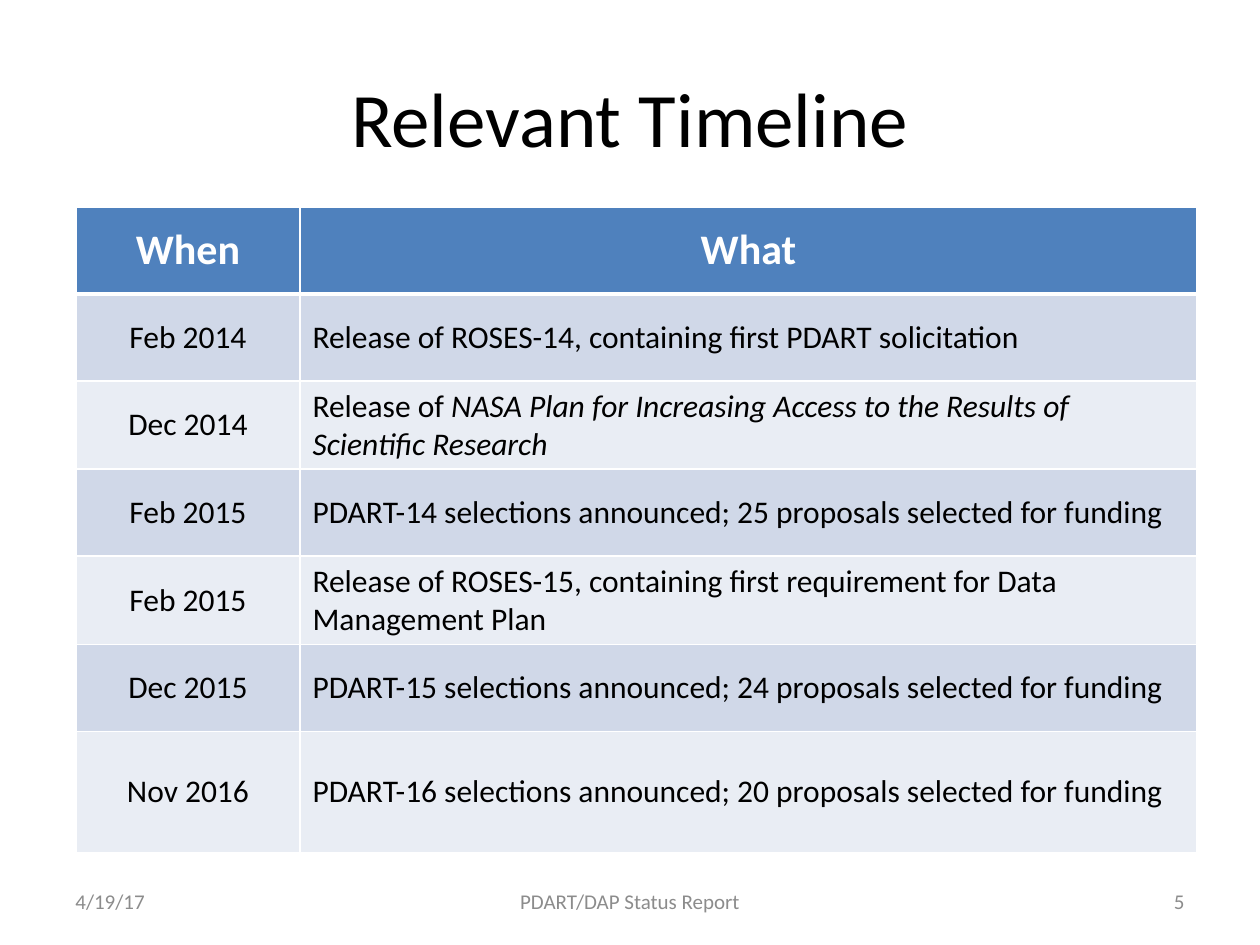
from lxml import etree
from pptx import Presentation
from pptx import util as u
from pptx.dml.color import RGBColor
from pptx.enum import text
from pptx.oxml import ns

EMU_PER_PX = 914400 / 126
FONT = "Calibri"
BLACK, WHITE, GRAY = "000000", "FFFFFF", "8C8C8C"
HEADER_FILL = "4F81BD"
BAND_FILLS = ("D0D8E8", "E9EDF4")
LEFT, CENTER, RIGHT = text.PP_ALIGN.LEFT, text.PP_ALIGN.CENTER, text.PP_ALIGN.RIGHT

COLUMN_WIDTHS = (224, 897)
ROW_HEIGHTS = (87,) * 6 + (121,)
EVENTS = (
    ("Feb 2014", ("Release of ROSES-14, containing first PDART solicitation",)),
    ("Dec 2014", ("Release of ",
                  "NASA Plan for Increasing Access to the Results of Scientific Research")),
    ("Feb 2015", ("PDART-14 selections announced; 25 proposals selected for funding",)),
    ("Feb 2015", ("Release of ROSES-15, containing first requirement for Data Management Plan",)),
    ("Dec 2015", ("PDART-15 selections announced; 24 proposals selected for funding",)),
    ("Nov 2016", ("PDART-16 selections announced; 20 proposals selected for funding",)),
)


def px(length):
    """Turn whole pixels into EMU."""
    return u.Emu(round(length * EMU_PER_PX))


def rgb(color):
    """Turn a hex string into a colour."""
    return RGBColor.from_string(color)


def write(frame, parts, size, color, align, bold=False):
    """Fill a text frame with one paragraph, its second part in italics."""
    paragraph = frame.paragraphs[0]
    paragraph.alignment = align
    for index, part in enumerate(parts):
        run = paragraph.add_run()
        run.text = part
        run.font.name = FONT
        run.font.size = u.Pt(size)
        run.font.bold = bold
        run.font.italic = index == 1
        run.font.color.rgb = rgb(color)


def add_label(slide, box, wording, size, color, align):
    """Add a wrapped, vertically centred text box."""
    frame = slide.shapes.add_textbox(*map(px, box)).text_frame
    frame.word_wrap = True
    frame.vertical_anchor = text.MSO_ANCHOR.MIDDLE
    write(frame, (wording,), size, color, align)


def add_borders(cell, top, bottom):
    """Draw white borders around a cell, with widths in points."""
    properties = cell._tc.get_or_add_tcPr()
    for side, width in (("L", 1), ("R", 1), ("T", top), ("B", bottom)):
        line = etree.SubElement(properties, ns.qn(f"a:ln{side}"), w=str(u.Pt(width)))
        fill = etree.SubElement(line, ns.qn("a:solidFill"))
        etree.SubElement(fill, ns.qn("a:srgbClr"), val=WHITE)


def style_cell(cell, fill, top=1, bottom=1):
    """Set the borders, fill and anchor of a cell."""
    add_borders(cell, top, bottom)
    cell.fill.solid()
    cell.fill.fore_color.rgb = rgb(fill)
    cell.vertical_anchor = text.MSO_ANCHOR.MIDDLE


def add_timeline(slide, left, top):
    """Add the table of dated events under a header row."""
    table = slide.shapes.add_table(
        len(ROW_HEIGHTS), len(COLUMN_WIDTHS), px(left), px(top),
        px(sum(COLUMN_WIDTHS)), px(sum(ROW_HEIGHTS))).table
    for column, width in zip(table.columns, COLUMN_WIDTHS):
        column.width = px(width)
    for row, height in zip(table.rows, ROW_HEIGHTS):
        row.height = px(height)
    for column, heading in enumerate(("When", "What")):
        cell = table.cell(0, column)
        style_cell(cell, HEADER_FILL, bottom=3)
        write(cell.text_frame, (heading,), 24, WHITE, CENTER, bold=True)
    for row, (date, event) in enumerate(EVENTS, start=1):
        for column, (parts, align) in enumerate((((date,), CENTER), (event, LEFT))):
            cell = table.cell(row, column)
            style_cell(cell, BAND_FILLS[(row - 1) % 2], top=3 if row == 1 else 1)
            write(cell.text_frame, parts, 18, BLACK, align)


def main():
    """Build the timeline slide."""
    deck = Presentation()
    deck.slide_width, deck.slide_height = px(1260), px(945)
    slide = deck.slides.add_slide(deck.slide_layouts[6])
    add_label(slide, (63, 38, 1134, 157), "Relevant Timeline", 44, BLACK, CENTER)
    for left, width, wording, align in (
            (63, 294, "4/19/17", LEFT),
            (430, 400, "PDART/DAP Status Report", CENTER),
            (903, 294, "5", RIGHT)):
        add_label(slide, (left, 876, width, 50), wording, 12, GRAY, align)
    add_timeline(slide, 76, 207)
    deck.save("out.pptx")


if __name__ == "__main__":
    main()
